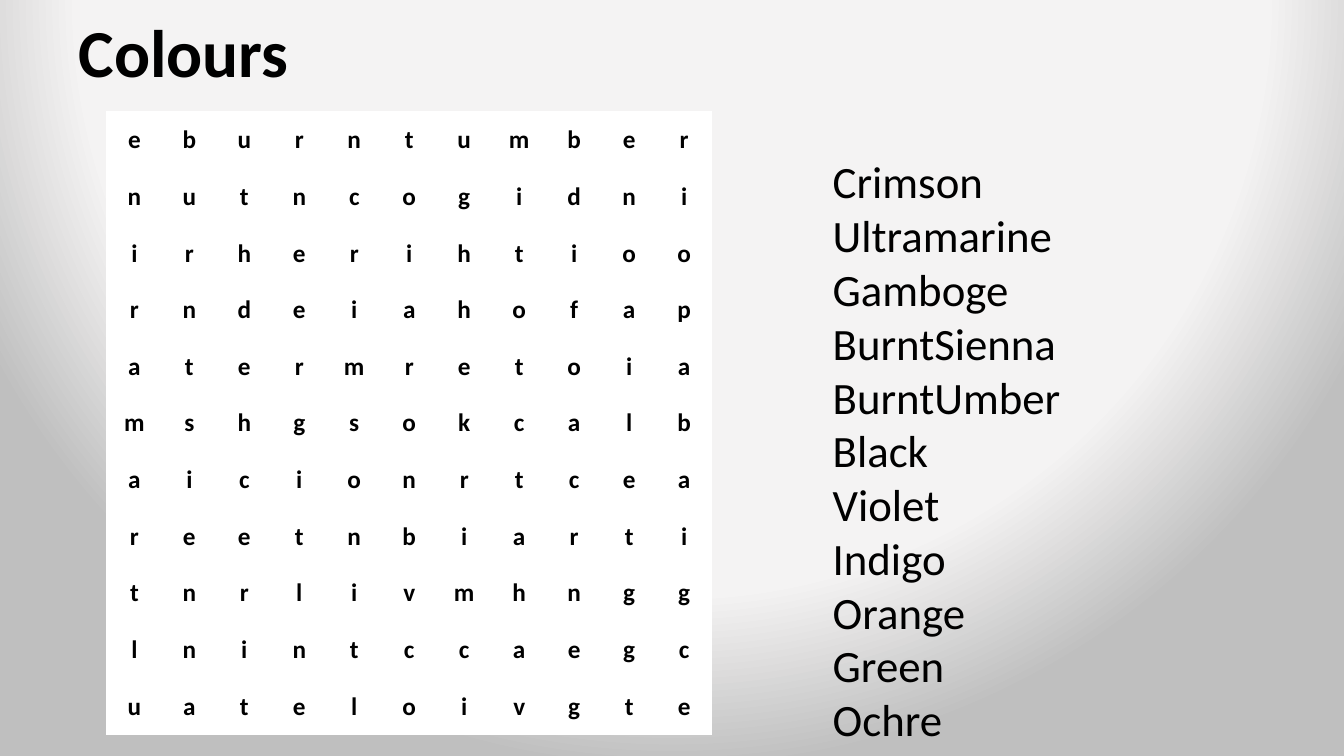
from dataclasses import dataclass

from pptx import Presentation
from pptx.dml.color import RGBColor
from pptx.enum.text import MSO_ANCHOR as Anchor, MSO_AUTO_SIZE as AutoSize, PP_ALIGN as Align
from pptx.oxml import parse_xml
from pptx.oxml.ns import nsdecls, qn
from pptx.util import Inches, Pt


@dataclass(frozen=True)
class Theme:
    font: str = "Calibri"
    ink: str = "000000"
    paper: str = "FFFFFF"
    glow: str = "F4F3F3"
    edge: str = "BFBFBF"
    title_size: int = 48
    word_size: int = 32
    letter_size: int = 18


theme = Theme()

LETTER_ROWS = [
    "eburntumber",
    "nutncogidni",
    "irherihtioo",
    "rndeiahofap",
    "atermretoia",
    "mshgsokcalb",
    "aicionrtcea",
    "reetnbiarti",
    "tnrlivmhngg",
    "lnintccaegc",
    "uateloivgte",
]
WORDS = [
    "Crimson", "Ultramarine", "Gamboge", "BurntSienna", "BurntUmber", "Black",
    "Violet", "Indigo", "Orange", "Green", "Ochre",
]

presentation = Presentation()
presentation.slide_width = Inches(13.33)
presentation.slide_height = Inches(7.5)
slide = presentation.slides.add_slide(presentation.slide_layouts[6])


def area(left, top, width, height):
    """Turn percentages of the slide's size into a position and size."""
    across = presentation.slide_width / 100
    down = presentation.slide_height / 100
    return [int(length) for length in (left * across, top * down, width * across, height * down)]


def write(paragraph, text, size, bold=False):
    paragraph.text = text
    paragraph.font.name = theme.font
    paragraph.font.size = Pt(size)
    paragraph.font.bold = bold
    paragraph.font.color.rgb = RGBColor.from_string(theme.ink)


# Background: a round glow centred above the slide
slide.background.fill.gradient()
gradient = slide.element.find(".//" + qn("a:gradFill"))
stops = "".join(
    f'<a:gs pos="{percent * 1000}"><a:srgbClr val="{color}"/></a:gs>'
    for percent, color in [(0, theme.glow), (40, theme.glow), (77, theme.glow), (100, theme.edge)]
)
gradient.getparent().replace(gradient, parse_xml(
    f'<a:gradFill {nsdecls("a")} rotWithShape="1"><a:gsLst>{stops}</a:gsLst>'
    '<a:path path="circle"><a:fillToRect l="10000" t="-25000" r="10000" b="125000"/></a:path>'
    '</a:gradFill>'
))

# Title
title_frame = slide.shapes.add_textbox(*area(5.1, -2.27, 86.27, 19.33)).text_frame
title_frame.word_wrap = True
title_frame.vertical_anchor = Anchor.MIDDLE
title = title_frame.paragraphs[0]
title.line_spacing = 0.9
write(title, "Colours", theme.title_size, bold=True)

# Words to find
words_frame = slide.shapes.add_textbox(*area(61.22, 19.73, 37.51, 80.27)).text_frame
words_frame.word_wrap = True
words_frame.auto_size = AutoSize.SHAPE_TO_FIT_TEXT
for index, word in enumerate(WORDS):
    paragraph = words_frame.add_paragraph() if index else words_frame.paragraphs[0]
    write(paragraph, word, theme.word_size)

# Letter grid
letter_grid = slide.shapes.add_table(
    len(LETTER_ROWS), len(LETTER_ROWS[0]), *area(7.95, 14.8, 45.01, 82.4)
).table
letter_grid.first_row = False
letter_grid.horz_banding = False
for row, letters in enumerate(LETTER_ROWS):
    for column, letter in enumerate(letters):
        cell = letter_grid.cell(row, column)
        cell.fill.solid()
        cell.fill.fore_color.rgb = RGBColor.from_string(theme.paper)
        cell.vertical_anchor = Anchor.MIDDLE
        paragraph = cell.text_frame.paragraphs[0]
        paragraph.alignment = Align.CENTER
        write(paragraph, letter, theme.letter_size, bold=True)

presentation.save("out.pptx")
